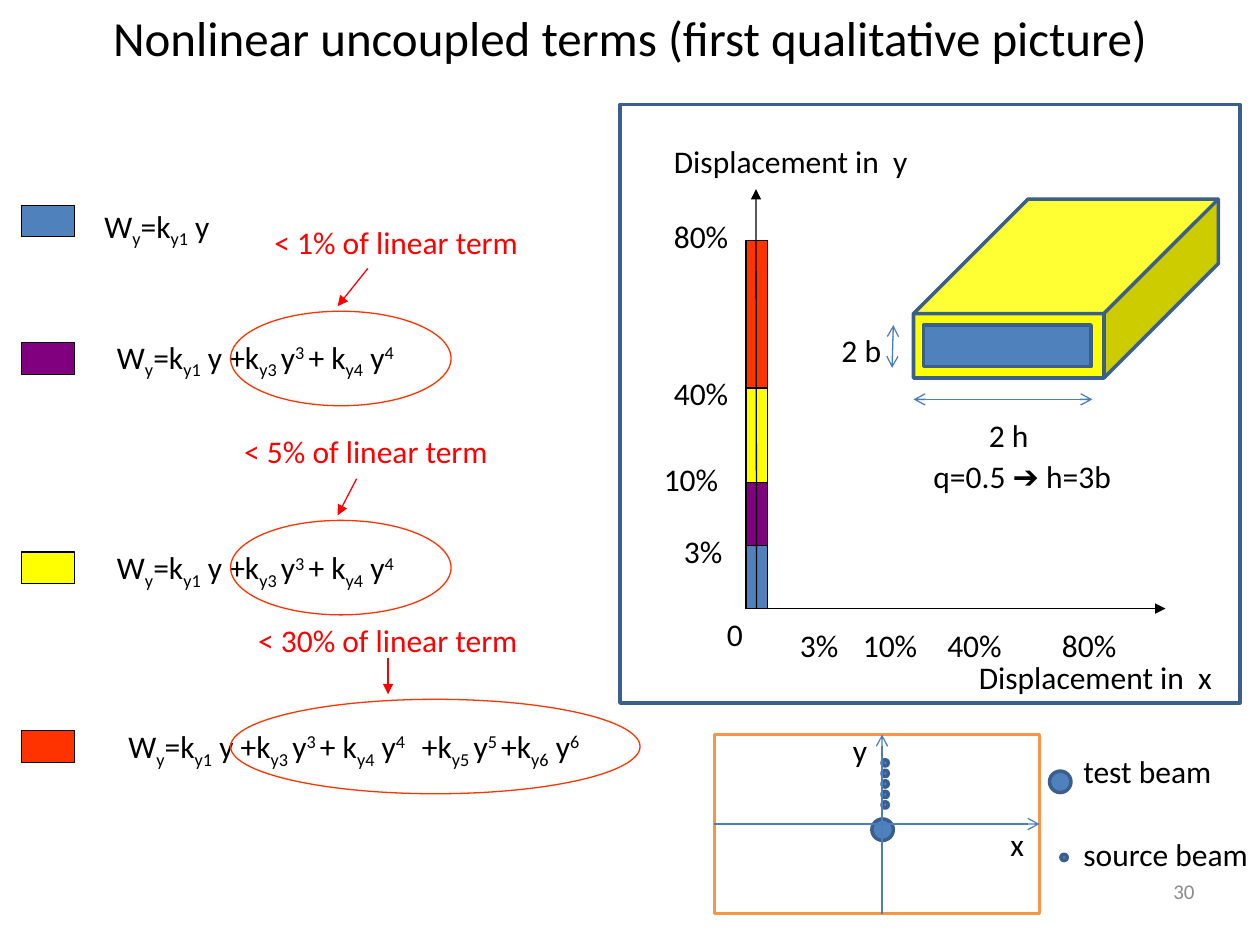
from dataclasses import dataclass
from typing import Optional

from lxml.etree import SubElement as Sub
from pptx import Presentation as Deck
from pptx.dml.color import RGBColor as Color
from pptx.enum.shapes import MSO_CONNECTOR as Link, MSO_SHAPE as Kind
from pptx.enum.text import MSO_ANCHOR as Anchor, MSO_AUTO_SIZE as Fit, PP_ALIGN as Align
from pptx.oxml.ns import qn
from pptx.util import Inches, Pt

BLACK = Color(0x00, 0x00, 0x00)
WHITE = Color(0xFF, 0xFF, 0xFF)
GRAY = Color(0x8C, 0x8C, 0x8C)
RED = Color(0xFF, 0x00, 0x00)
FLAME = Color(0xFF, 0x33, 0x00)
YELLOW = Color(0xFF, 0xFF, 0x00)
PURPLE = Color(0x80, 0x00, 0x80)
BLUE = Color(0x4F, 0x81, 0xBD)
NAVY = Color(0x3A, 0x5F, 0x8C)
STEEL = Color(0x4B, 0x7E, 0xBC)
ORANGE = Color(0xF7, 0x96, 0x46)

FONT = {"name": "Calibri", "size": Pt(18)}
SHIFT = {"_": "-25000", "^": "30000"}
LINEAR = "W|_y|=k|_y1| y"
CUBIC = LINEAR + "| +k|_y3 |y|^3 |+ k|_y4| y|^4"
HIGH = "+k|_y5 |y|^5 |+k|_y6| y|^6"


@dataclass
class Box:
    left: float
    top: float
    wide: float
    high: float
    fill: Optional[Color] = None
    line: Color = NAVY
    weight: float = 2
    kind: Kind = Kind.RECTANGLE


@dataclass
class Label:
    text: str
    left: float
    top: float
    wide: float
    high: float = 0.4
    wrap: bool = False
    color: Color = BLACK


@dataclass
class Arrow:
    start: tuple[float, float]
    end: tuple[float, float]
    color: Color = BLACK
    tip: str = "triangle"
    both: bool = False


@dataclass
class Term:
    top: float
    color: Color
    formula: Label
    note: Optional[Label] = None
    arrow: Optional[Arrow] = None
    ring: float = 1.75


def put(target, values: dict) -> None:
    for name, value in values.items():
        setattr(target, name, value)


def draw_box(shapes, box: Box):
    shape = shapes.add_shape(box.kind, *map(Inches, (box.left, box.top, box.wide, box.high)))
    shape.shadow.inherit = False
    if box.fill is None:
        shape.fill.background()
    else:
        shape.fill.solid()
        shape.fill.fore_color.rgb = box.fill
    shape.line.width = Pt(box.weight)
    shape.line.color.rgb = box.line
    return shape


def draw_dot(shapes, left: float, top: float, size: float) -> None:
    draw_box(shapes, Box(left, top, size, size, BLUE, kind=Kind.FLOWCHART_CONNECTOR))


def draw_label(shapes, label: Label):
    shape = shapes.add_textbox(*map(Inches, (label.left, label.top, label.wide, label.high)))
    put(shape.text_frame, {"word_wrap": label.wrap, "auto_size": Fit.SHAPE_TO_FIT_TEXT})
    for part in label.text.split("|"):
        shift = SHIFT.get(part[0])
        run = shape.text_frame.paragraphs[0].add_run()
        run.text = part[1:] if shift else part
        put(run.font, FONT)
        run.font.color.rgb = label.color
        if shift:
            run.font._element.set("baseline", shift)
    return shape


def draw_arrow(shapes, arrow: Arrow):
    line = shapes.add_connector(Link.STRAIGHT, *map(Inches, arrow.start + arrow.end))
    line.line.width = Pt(0.75)
    line.line.color.rgb = arrow.color
    edge = line.line._get_or_add_ln()
    for end in ("headEnd", "tailEnd") if arrow.both else ("tailEnd",):
        Sub(edge, qn(f"a:{end}")).set("type", arrow.tip)
    Sub(line._element.spPr, qn("a:effectLst"))
    return line


def draw_term(shapes, term: Term) -> None:
    draw_box(shapes, Box(0.17, term.top, 0.42, 0.25, term.color, BLACK, 0.75))
    draw_label(shapes, term.formula)
    if term.note:
        draw_box(shapes, Box(1.83, term.top - 0.25, term.ring, 0.75, None, FLAME, 0.75, Kind.OVAL))
        draw_label(shapes, term.note)
        draw_arrow(shapes, term.arrow)


TERMS = [
    Term(1.63, BLUE, Label(LINEAR, 0.73, 1.59, 1.17, 0.71)),
    Term(2.72, PURPLE, Label(CUBIC, 0.83, 2.63, 2.79),
         Label("< 1% of linear term", 2.08, 1.72, 2.16, color=RED),
         Arrow((2.92, 2.13), (2.68, 2.43), RED)),
    Term(4.38, YELLOW, Label(CUBIC, 0.83, 4.3, 2.79, 0.7),
         Label("< 5% of linear term", 1.84, 3.38, 2.16, color=RED),
         Arrow((2.83, 3.8), (2.68, 4.09), RED)),
    Term(5.8, FLAME, Label(CUBIC, 0.92, 5.72, 2.79, 0.7),
         Label("< 30% of linear term", 1.95, 4.88, 2.29, color=RED),
         Arrow((3.08, 5.22), (3.08, 5.51), RED), 3.25),
]
BARS = [(2.92, FLAME), (1.75, YELLOW), (1, PURPLE), (0.5, BLUE)]
LABELS = [
    Label(HIGH, 3.25, 5.72, 1.64, wrap=True),
    Label("Displacement in  y", 5.25, 1.08, 2.08),
    Label("Displacement in  x", 7.67, 5.17, 2.08),
    Label("80%", 5.25, 1.67, 0.7),
    Label("40%", 5.25, 2.92, 0.7),
    Label("10%", 5.17, 3.6, 0.7),
    Label("3%", 5.33, 4.17, 0.56, wrap=True),
    Label("0", 5.67, 4.83, 0.56, wrap=True),
    Label("3%", 6.25, 4.92, 0.56, wrap=True),
    Label("10%", 6.75, 4.92, 0.7),
    Label("40%", 7.42, 4.92, 0.7),
    Label("80%", 8.33, 4.92, 0.7),
    Label("2 b", 6.58, 2.58, 0.52),
    Label("2 h", 7.75, 3.25, 0.52),
    Label("q=0.5 ➔ h=3b", 7.31, 3.58, 1.69),
    Label("x", 7.92, 6.5, 0.5, wrap=True),
    Label("y", 6.67, 5.75, 0.33, wrap=True),
    Label("test beam", 8.5, 5.92, 2.08, wrap=True),
    Label("source beam", 8.5, 6.58, 2, 0.42, True),
]


def draw_graph(shapes) -> None:
    base = 4.83
    for high, color in BARS:
        bar = draw_box(shapes, Box(5.92, base - high, 0.17, high, color, BLACK, 0.75))
    for end in ((6, 1.5), (9.25, base)):
        draw_arrow(shapes, Arrow((6, base), end)).begin_connect(bar, 2)
    draw_box(shapes, Box(4.92, 0.83, 4.92, 4.75))


def draw_pipe(shapes) -> None:
    cube = draw_box(shapes, Box(7.25, 1.58, 2.42, 1.42, YELLOW, kind=Kind.CUBE))
    cube.adjustments[0] = 0.64
    draw_box(shapes, Box(7.33, 2.58, 1.33, 0.33, BLUE))
    draw_arrow(shapes, Arrow((7.25, 3.17), (8.67, 3.17), STEEL, "arrow", True))
    draw_arrow(shapes, Arrow((7.08, 2.92), (7.09, 2.58), STEEL, "arrow", True))


def draw_beams(shapes) -> None:
    frame = draw_box(shapes, Box(5.67, 5.83, 2.58, 1.42, WHITE, ORANGE))
    draw_dot(shapes, 6.92, 6.5, 0.17)
    for step in range(5):
        draw_dot(shapes, 7, 6.03 + step / 12, 0.05)
    level = draw_arrow(shapes, Arrow((5.67, 6.54), (8.25, 6.54), STEEL, "arrow"))
    level.begin_connect(frame, 1)
    level.end_connect(frame, 3)
    draw_arrow(shapes, Arrow((7, 7.25), (7, 5.83), STEEL, "arrow"))
    draw_dot(shapes, 8.33, 6.12, 0.17)
    draw_dot(shapes, 8.42, 6.78, 0.05)


def main() -> None:
    deck = Deck()
    put(deck, {"slide_width": Inches(10), "slide_height": Inches(7.5)})
    slide = deck.slides.add_slide(deck.slide_layouts[5])
    shapes = slide.shapes
    title = shapes.title
    put(title, {"left": Inches(0.5), "top": Inches(-0.33), "width": Inches(9), "height": Inches(1.25)})
    title.text_frame.text = "Nonlinear uncoupled terms (first qualitative picture)"
    font = title.text_frame.paragraphs[0].runs[0].font
    put(font, FONT | {"size": Pt(28)})
    font.color.rgb = BLACK
    draw_graph(shapes)
    draw_pipe(shapes)
    draw_beams(shapes)
    for term in TERMS:
        draw_term(shapes, term)
    for label in LABELS:
        draw_label(shapes, label)
    page = draw_label(shapes, Label("30", 7.25, 6.87, 2.33, wrap=True, color=GRAY)).text_frame
    put(page, {"vertical_anchor": Anchor.MIDDLE, "auto_size": Fit.NONE})
    page.paragraphs[0].alignment = Align.RIGHT
    page.paragraphs[0].runs[0].font.size = Pt(12)
    deck.save("out.pptx")


if __name__ == "__main__":
    main()
